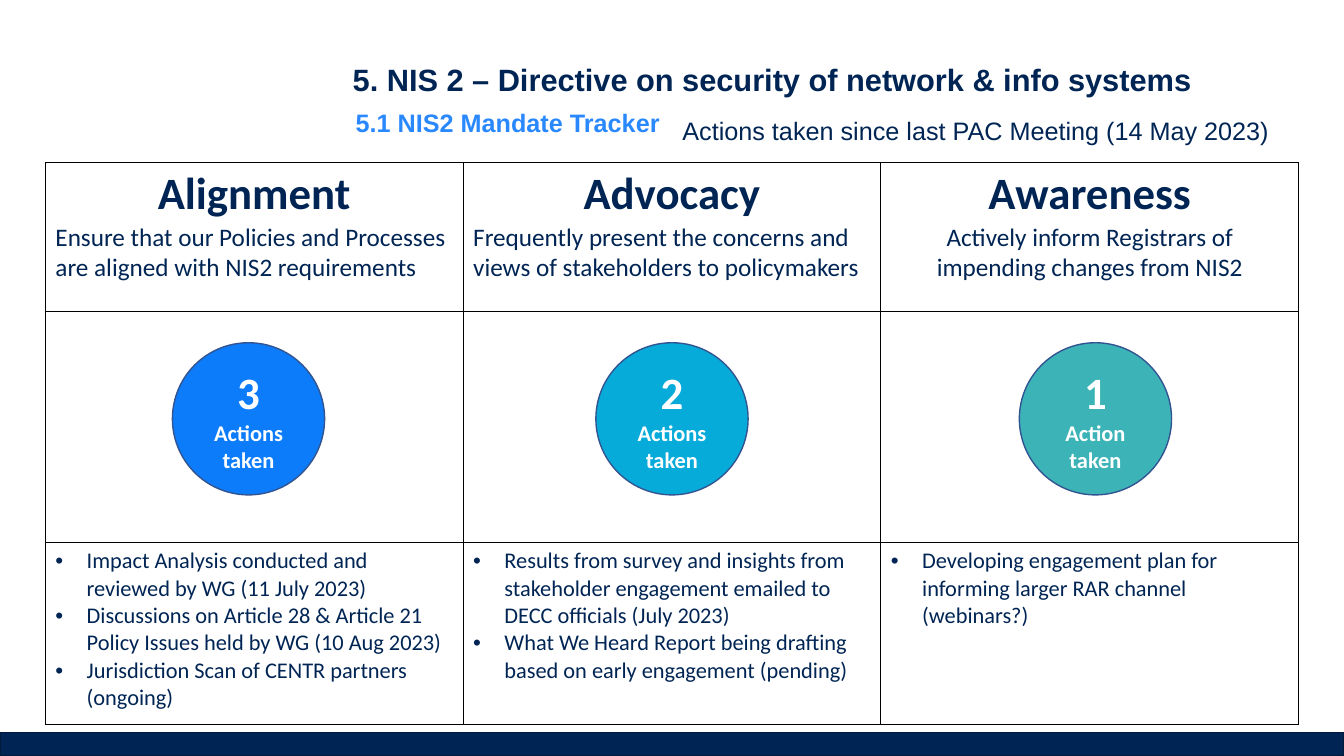
from lxml import etree
from pptx import Presentation
from pptx import util as u
from pptx.dml.color import RGBColor
from pptx.enum import shapes, text
from pptx.oxml.ns import qn

COLORS = {
    "navy": "002554", "navy_edge": "001B3E", "sky": "2A88FF",
    "white": "FFFFFF", "black": "000000", "circle_edge": "325491",
    "blue": "0C7CFA", "cyan": "07ABD9", "teal": "3CB4B7",
}
LEFT, CENTER = text.PP_ALIGN.LEFT, text.PP_ALIGN.CENTER
TABLE_LEFT, TABLE_TOP, TABLE_WIDTH = 0.45, 1.61, 12.43
ROW_HEIGHTS = [1.48, 2.29, 1.81]
CIRCLE_LEFT, CIRCLE_TOP, CIRCLE_SIZE, CIRCLE_STEP = 1.71, 3.4, 1.51, 4.2

# heading, aim, aim alignment, circle colour, count, label, actions
PILLARS = [
    ("Alignment",
     "Ensure that our Policies and Processes are aligned with NIS2 requirements",
     LEFT, "blue", "3", "Actions taken",
     ["Impact Analysis conducted and reviewed by WG (11 July 2023)",
      "Discussions on Article 28 & Article 21 Policy Issues held by WG (10 Aug 2023)",
      "Jurisdiction Scan of CENTR partners (ongoing)"]),
    ("Advocacy",
     "Frequently present the concerns and views of stakeholders to policymakers",
     LEFT, "cyan", "2", "Actions taken",
     ["Results from survey and insights from stakeholder engagement emailed to "
      "DECC officials (July 2023)",
      "What We Heard Report being drafting based on early engagement (pending)"]),
    ("Awareness",
     "Actively inform Registrars of impending changes from NIS2",
     CENTER, "teal", "1", "Action taken",
     ["Developing engagement plan for informing larger RAR channel (webinars?)"]),
]


def rgb(name):
    return RGBColor.from_string(COLORS[name])


def write(tf, content, size=18, color="navy", bold=False, font="Calibri",
          align=LEFT, bullet=False):
    """Put one paragraph into the frame, using its empty first one if free."""
    p = tf.paragraphs[0]
    if p.runs:
        p = tf.add_paragraph()
    p.alignment = align
    if bullet:
        pPr = p._p.get_or_add_pPr()
        indent = u.Inches(0.31)
        pPr.set("marL", str(indent))
        pPr.set("indent", str(-indent))
        etree.SubElement(pPr, qn("a:buFont"), typeface="Arial")
        etree.SubElement(pPr, qn("a:buChar"), char="•")
    r = p.add_run()
    r.text = content
    r.font.size = u.Pt(size)
    r.font.bold = bold
    r.font.name = font
    r.font.color.rgb = rgb(color)


def add_label(s, box, content, **fmt):
    tf = s.shapes.add_textbox(*map(u.Inches, box)).text_frame
    tf.word_wrap = True
    write(tf, content, font="Arial", **fmt)


def add_filled(s, kind, box, fill, edge):
    sp = s.shapes.add_shape(kind, *map(u.Inches, box))
    sp.shadow.inherit = False
    sp.fill.solid()
    sp.fill.fore_color.rgb = rgb(fill)
    sp.line.color.rgb = rgb(edge)
    sp.line.width = u.Pt(1)
    return sp


def add_circle(s, left, fill, count, label):
    box = (left, CIRCLE_TOP, CIRCLE_SIZE, CIRCLE_SIZE)
    sp = add_filled(s, shapes.MSO_SHAPE.OVAL, box, fill, "circle_edge")
    tf = sp.text_frame
    tf.word_wrap = True
    tf.vertical_anchor = text.MSO_ANCHOR.MIDDLE
    for content, size in ((count, 32), (label, 16)):
        write(tf, content, size=size, color="white", bold=True, align=CENTER)


def outline(cell):
    tcPr = cell._tc.get_or_add_tcPr()
    for side in ("lnL", "lnR", "lnT", "lnB"):
        ln = etree.SubElement(tcPr, qn("a:" + side), w=str(u.Pt(1)))
        fill = etree.SubElement(ln, qn("a:solidFill"))
        etree.SubElement(fill, qn("a:srgbClr"), val=COLORS["black"])
    cell.fill.background()


def add_tracker(s):
    box = (TABLE_LEFT, TABLE_TOP, TABLE_WIDTH, sum(ROW_HEIGHTS))
    table = s.shapes.add_table(len(ROW_HEIGHTS), len(PILLARS),
                               *map(u.Inches, box)).table
    table.first_row = table.horz_banding = False
    for row, height in zip(table.rows, ROW_HEIGHTS):
        row.height = u.Inches(height)
    for cell in table.iter_cells():
        outline(cell)
    for col, (heading, aim, align, _, _, _, actions) in enumerate(PILLARS):
        table.columns[col].width = u.Inches(TABLE_WIDTH / len(PILLARS))
        head = table.cell(0, col).text_frame
        write(head, heading, size=32, bold=True, align=CENTER)
        write(head, aim, align=align)
        for action in actions:
            write(table.cell(2, col).text_frame, action, size=16, bullet=True)


def main():
    prs = Presentation()
    prs.slide_width, prs.slide_height = u.Inches(13.33), u.Inches(7.5)
    s = prs.slides.add_slide(prs.slide_layouts[6])

    # Footer band
    add_filled(s, shapes.MSO_SHAPE.RECTANGLE, (0, 7.27, 13.33, 0.23),
               "navy", "navy_edge")

    # Titles
    add_label(s, (3.21, 0.55, 8.9, 0.47),
              "5. NIS 2 – Directive on security of network & info systems",
              size=22, bold=True, align=CENTER)
    add_label(s, (3.43, 1.02, 4.7, 0.4), "5.1 NIS2 Mandate Tracker",
              color="sky", bold=True)
    add_label(s, (6.67, 1.09, 6.33, 0.4),
              "Actions taken since last PAC Meeting (14 May 2023)")

    # Tracker table with a count circle per pillar
    add_tracker(s)
    for i, (_, _, _, fill, count, label, _) in enumerate(PILLARS):
        add_circle(s, CIRCLE_LEFT + i * CIRCLE_STEP, fill, count, label)

    prs.save("out.pptx")


if __name__ == "__main__":
    main()
